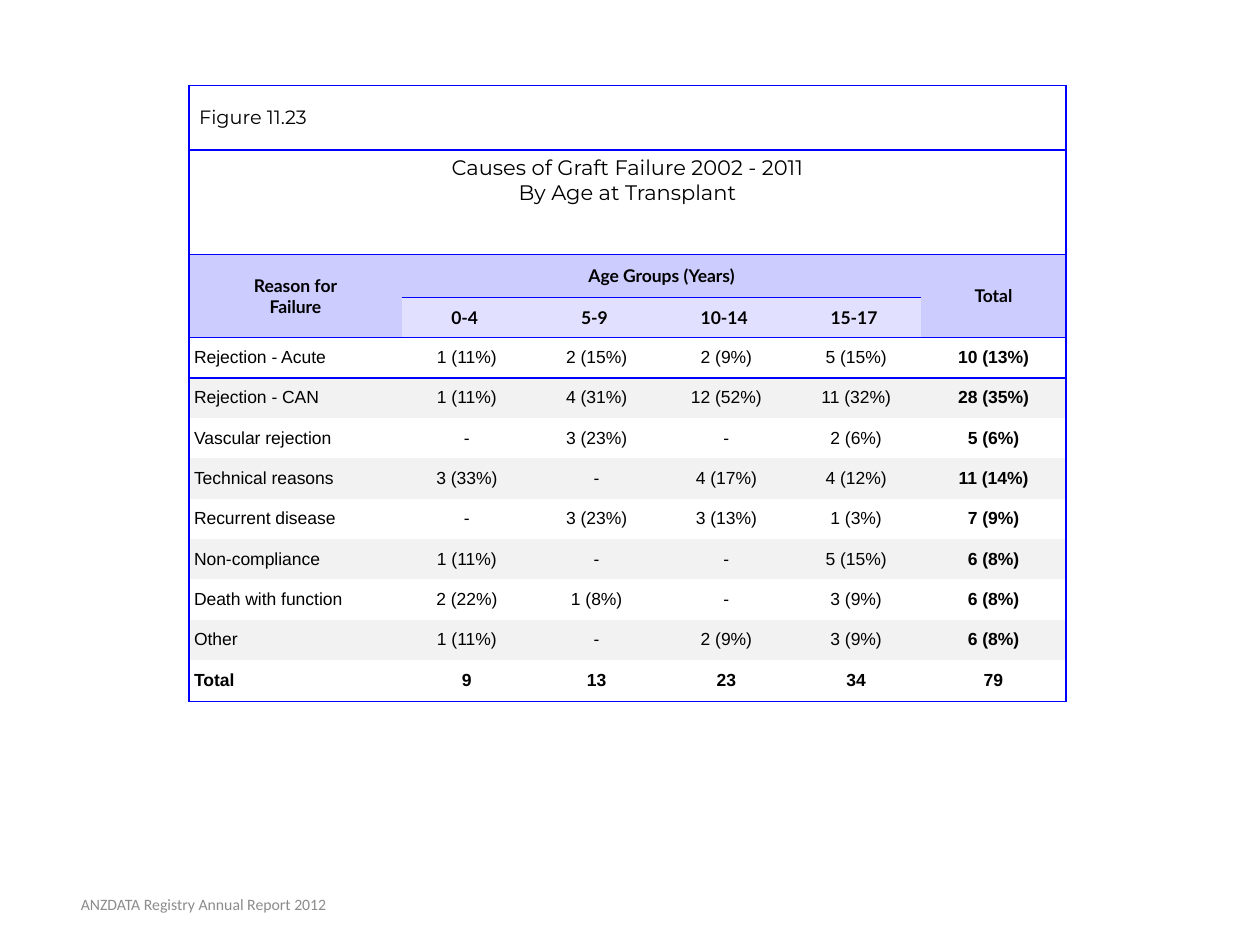
from lxml import etree
from pptx import Presentation
from pptx.dml.color import RGBColor
from pptx.enum import text
from pptx.oxml import ns
from pptx.util import Inches, Pt

NO_GRID_STYLE = "{2D5ABB26-0587-4C30-8999-92F81FD0307C}"
RULE, HEADER, AGE_BAND, STRIPE = "0000FF", "CCCCFF", "E1E1FF", "F2F2F2"
LEFT, CENTER = text.PP_ALIGN.LEFT, text.PP_ALIGN.CENTER

AGES = ["0-4 ", "5-9 ", "10-14 ", "15-17 "]
CAUSES = [
    ["Rejection - Acute", "1 (11%)", "2 (15%)", "2 (9%)", "5 (15%)", "10 (13%)"],
    ["Rejection - CAN", "1 (11%)", "4 (31%)", "12 (52%)", "11 (32%)", "28 (35%)"],
    ["Vascular rejection", "-", "3 (23%)", "-", "2 (6%)", "5 (6%)"],
    ["Technical reasons", "3 (33%)", "-", "4 (17%)", "4 (12%)", "11 (14%)"],
    ["Recurrent disease", "-", "3 (23%)", "3 (13%)", "1 (3%)", "7 (9%)"],
    ["Non-compliance", "1 (11%)", "-", "-", "5 (15%)", "6 (8%)"],
    ["Death with function", "2 (22%)", "1 (8%)", "-", "3 (9%)", "6 (8%)"],
    ["Other", "1 (11%)", "-", "2 (9%)", "3 (9%)", "6 (8%)"],
    ["Total", "9", "13", "23", "34", "79"],
]
COLUMN_WIDTHS = [1.69] + [1.03] * 4 + [1.15]
ROW_HEIGHTS = [0.51, 0.83, 0.34] + [0.32] * 9 + [0.33]
FIRST_CAUSE = 4
TOTAL_ROW, TOTAL_COLUMN = len(ROW_HEIGHTS) - 1, len(COLUMN_WIDTHS) - 1


def color(value):
    return RGBColor.from_string(value)


def write(frame, lines, font, size, bold=False, align=CENTER, after=None, ink="000000"):
    for index, line in enumerate(lines):
        paragraph = frame.paragraphs[0] if index == 0 else frame.add_paragraph()
        paragraph.alignment = align
        if after is not None:
            paragraph.space_after = Pt(after)
        run = paragraph.add_run()
        run.text = line
        run.font.name, run.font.size, run.font.bold = font, Pt(size), bold
        run.font.color.rgb = color(ink)


def fill_cell(cell, lines, font, size, inset=0.04, anchor=text.MSO_ANCHOR.MIDDLE, **style):
    cell.margin_left = cell.margin_right = Inches(inset)
    cell.margin_top = cell.margin_bottom = Inches(inset)
    cell.vertical_anchor = anchor
    write(cell.text_frame, lines, font, size, **style)


def rule_cell(cell, row, column):
    """Draw the outer frame and the horizontal rules that touch this cell."""
    def ruled(boundary):
        full_width = boundary in (0, 1, 2, FIRST_CAUSE, TOTAL_ROW + 1)
        return full_width or (boundary == 3 and 0 < column < TOTAL_COLUMN)

    edges = {
        "L": column == 0,
        "R": column + cell.span_width == TOTAL_COLUMN + 1,
        "T": ruled(row),
        "B": ruled(row + cell.span_height),
    }
    properties = cell._tc.get_or_add_tcPr()
    for side, drawn in edges.items():
        if drawn:
            line = etree.SubElement(properties, ns.qn(f"a:ln{side}"), w=str(Pt(1)))
            solid = etree.SubElement(line, ns.qn("a:solidFill"))
            etree.SubElement(solid, ns.qn("a:srgbClr"), val=RULE)


def cell_fill(row, column):
    if row in (2, 3):
        return AGE_BAND if row == 3 and 0 < column < TOTAL_COLUMN else HEADER
    if row > FIRST_CAUSE and (row - FIRST_CAUSE) % 2:
        return STRIPE
    return None


def add_causes_table(slide, left, top, width, height):
    table = slide.shapes.add_table(
        len(ROW_HEIGHTS), len(COLUMN_WIDTHS), left, top, width, height).table
    table.first_row = table.horz_banding = False
    table._tbl.tblPr.find(ns.qn("a:tableStyleId")).text = NO_GRID_STYLE
    for column, column_width in zip(table.columns, COLUMN_WIDTHS):
        column.width = Inches(column_width)
    for row, row_height in zip(table.rows, ROW_HEIGHTS):
        row.height = Inches(row_height)

    # Merged heading cells: (first row, first column, last row, last column)
    for r1, c1, r2, c2 in [(0, 0, 0, 5), (1, 0, 1, 5), (2, 0, 3, 0),
                           (2, 1, 2, 4), (2, 5, 3, 5)]:
        table.cell(r1, c1).merge(table.cell(r2, c2))

    # Rules and fills
    for row in range(len(ROW_HEIGHTS)):
        for column in range(len(COLUMN_WIDTHS)):
            cell = table.cell(row, column)
            rule_cell(cell, row, column)
            shade = cell_fill(row, column)
            if shade:
                cell.fill.solid()
                cell.fill.fore_color.rgb = color(shade)
            else:
                cell.fill.background()

    # Figure number and title
    fill_cell(table.cell(0, 0), ["Figure 11.23"], "Montserrat", 11, inset=0.08, align=LEFT)
    fill_cell(table.cell(1, 0),
              ["Causes of Graft Failure 2002 - 2011", "By Age at Transplant"],
              "Montserrat", 12, anchor=text.MSO_ANCHOR.TOP)

    # Column headings
    headings = [(2, 0, ["Reason for", "Failure"]), (2, 1, ["Age Groups (Years)"]),
                (2, TOTAL_COLUMN, ["Total"])]
    headings += [(3, column, [age]) for column, age in enumerate(AGES, 1)]
    for row, column, lines in headings:
        fill_cell(table.cell(row, column), lines, "Lato", 10, bold=True)

    # Causes and totals
    for row, values in enumerate(CAUSES, FIRST_CAUSE):
        for column, value in enumerate(values):
            fill_cell(table.cell(row, column), [value], "Arial", 10,
                      bold=row == TOTAL_ROW or column == TOTAL_COLUMN,
                      align=CENTER if column else LEFT, after=14)


def add_report_footer(slide, left, top, width, height):
    frame = slide.shapes.add_textbox(left, top, width, height).text_frame
    frame.word_wrap = True
    frame.vertical_anchor = text.MSO_ANCHOR.MIDDLE
    write(frame, ["ANZDATA Registry Annual Report 2012"], "Calibri", 9, ink="8C8C8C")


def main():
    deck = Presentation()
    deck.slide_width, deck.slide_height = Inches(10), Inches(7.5)
    slide = deck.slides.add_slide(deck.slide_layouts[6])
    add_causes_table(slide, Inches(1.5), Inches(0.68), Inches(6.96), Inches(4.89))
    add_report_footer(slide, Inches(0.03), Inches(6.98), Inches(3.17), Inches(0.4))
    deck.save("out.pptx")


if __name__ == "__main__":
    main()
